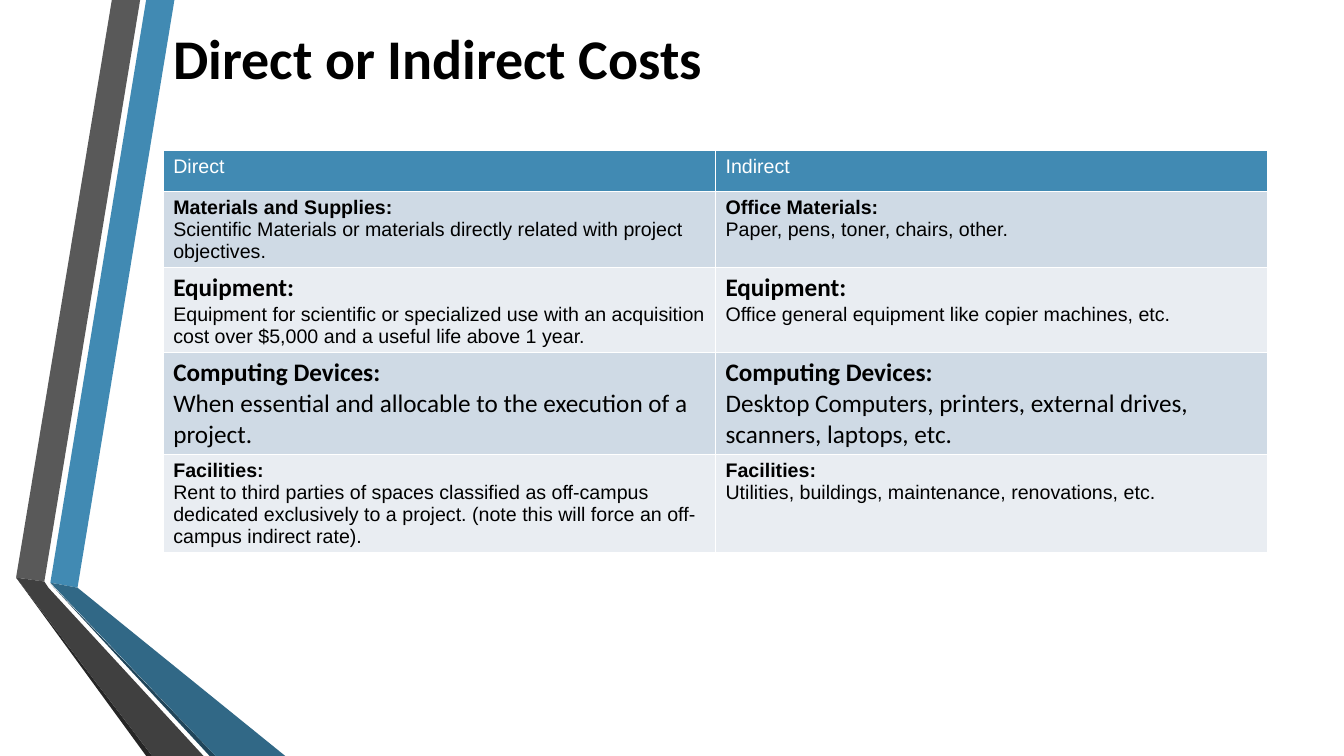
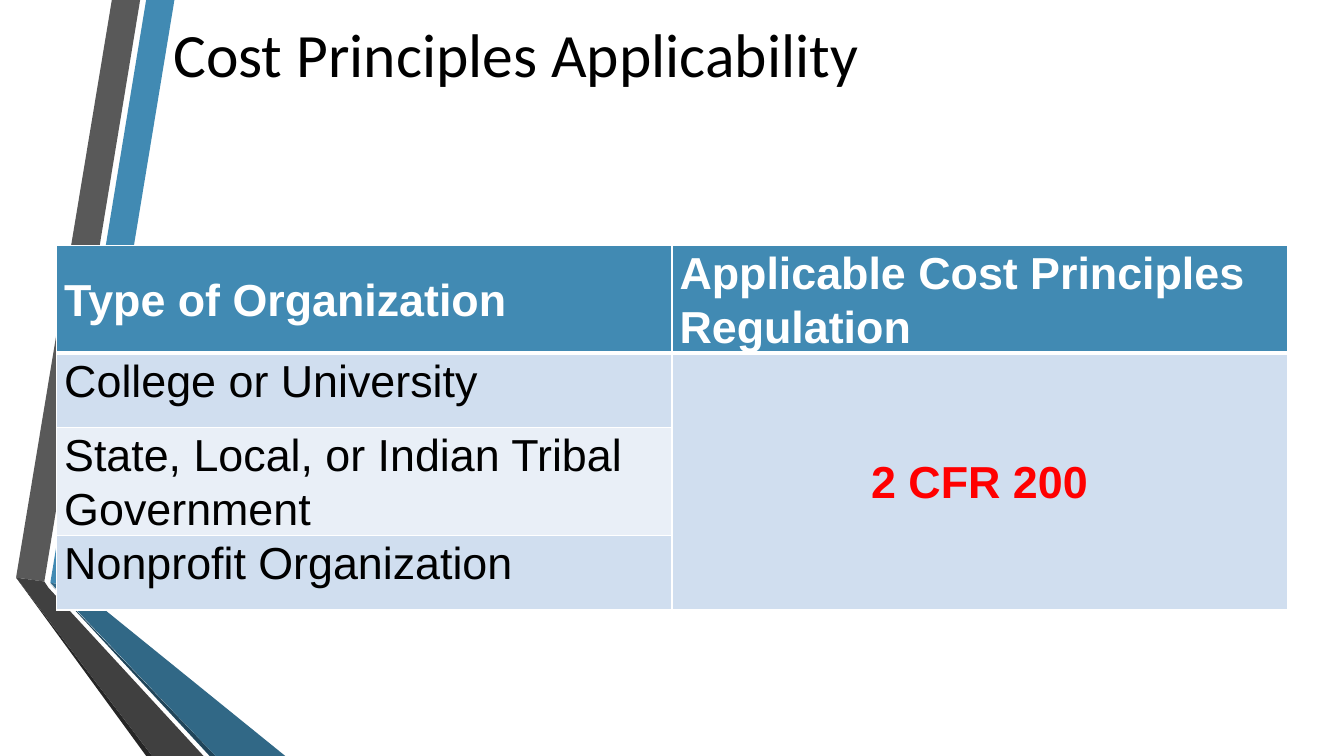
from dataclasses import dataclass
from typing import Any

from lxml.etree import SubElement
from pptx import Presentation
from pptx.dml.color import RGBColor
from pptx.enum.text import MSO_ANCHOR as Anchor, MSO_AUTO_SIZE as AutoSize, PP_ALIGN as Align
from pptx.oxml.ns import qn
from pptx.util import Pt

BLUE = RGBColor(0x41, 0x8A, 0xB3)
BLUE_FOLD = RGBColor(0x31, 0x68, 0x86)
BLUE_EDGE = RGBColor(0x20, 0x45, 0x5A)
GREY = RGBColor(0x59, 0x59, 0x59)
GREY_FOLD = RGBColor(0x40, 0x40, 0x40)
GREY_EDGE = RGBColor(0x26, 0x26, 0x26)
COST_TINTS = (RGBColor(0xCF, 0xDA, 0xE5), RGBColor(0xE9, 0xED, 0xF2))
RULE_TINTS = (RGBColor(0xD0, 0xDE, 0xEF), RGBColor(0xE9, 0xEF, 0xF7))
WHITE = RGBColor(0xFF, 0xFF, 0xFF)
BLACK = RGBColor(0, 0, 0)
RED = RGBColor(0xFF, 0, 0)

WIDTH, HEIGHT = 960, 540
SMALL = {"font": "Arial", "size": 14}
LARGE = {"font": "Calibri", "size": 18}
RULE_TEXT = {"font": "Arial", "size": 32, "spacing": 1.07}
TITLE_LEFT, TITLE_TOP, TITLE_WIDTH, TITLE_HEIGHT = 116.6, -28, 789, 138


@dataclass(frozen=True)
class Band:
    color: RGBColor
    points: tuple[tuple[float, float], ...]


@dataclass(frozen=True)
class Grid:
    left: float
    top: float
    width: float
    row_height: float
    rows: int
    tints: tuple[RGBColor, RGBColor]
    header_rule: float
    margin_x: float
    margin_y: float


@dataclass(frozen=True)
class Cost:
    heading: str
    detail: str


@dataclass(frozen=True)
class CostPair:
    direct: Cost
    indirect: Cost
    heading_format: dict[str, Any]
    detail_format: dict[str, Any]


BANDS = (
    Band(BLUE, ((36, 416.2), (55.4, 419.8), (124.6, 0), (104.4, 0))),
    Band(GREY, ((100.1, 0), (79.9, 0), (11.5, 412.6), (31.7, 415.4))),
    Band(GREY_EDGE, ((11.5, 412.6), (104.4, HEIGHT), (108.7, HEIGHT))),
    Band(BLUE_EDGE, ((36, 416.9), (149.8, HEIGHT), (154.1, HEIGHT))),
    Band(BLUE_FOLD, ((36, 416.2), (154.1, HEIGHT), (203.8, HEIGHT), (55.4, 419.8))),
    Band(GREY_FOLD, ((145.4, HEIGHT), (34.6, 419.8), (31.7, 415.4), (11.5, 412.6),
                     (108.7, HEIGHT))),
)

COSTS = (
    CostPair(
        Cost("Materials and Supplies:",
             "Scientific Materials or materials directly related with project objectives."),
        Cost("Office Materials:", "Paper, pens, toner, chairs, other."),
        SMALL, SMALL),
    CostPair(
        Cost("Equipment:",
             "Equipment for scientific or specialized use with an acquisition cost over "
             "$5,000 and a useful life above 1 year."),
        Cost("Equipment:", "Office general equipment like copier machines, etc."),
        LARGE, SMALL),
    CostPair(
        Cost("Computing Devices:",
             "When essential and allocable to the execution of a project."),
        Cost("Computing Devices:",
             "Desktop Computers, printers, external drives, scanners, laptops, etc."),
        LARGE, LARGE),
    CostPair(
        Cost("Facilities:",
             "Rent to third parties of spaces classified as off-campus dedicated exclusively "
             "to a project. (note this will force an off-campus indirect rate)."),
        Cost("Facilities:", "Utilities, buildings, maintenance, renovations, etc."),
        SMALL, SMALL),
)

ORGANIZATIONS = (
    "College or University",
    "State, Local, or Indian Tribal Government",
    "Nonprofit Organization",
)

COST_GRID = Grid(116.6, 107.5, 789, 29.2, len(COSTS) + 1, COST_TINTS, 1, 7.2, 3.6)
RULE_GRID = Grid(40.5, 175.5, 879, 53.3, len(ORGANIZATIONS) + 1, RULE_TINTS, 3, 5.4, 0)


def write(frame, text: str, *, font: str, size: float, color: RGBColor = BLACK,
          bold: bool = False, align=Align.LEFT, spacing: float = 1.0) -> None:
    """Fill the frame's empty first paragraph, or add one after the text it has."""
    paragraph = frame.add_paragraph() if frame.text else frame.paragraphs[0]
    paragraph.alignment = align
    paragraph.line_spacing = spacing
    run = paragraph.add_run()
    run.text = text
    run.font.name = font
    run.font.size = Pt(size)
    run.font.bold = bold
    run.font.color.rgb = color


def add_bands(slide, layout) -> None:
    """Draw the folded bands and move them behind everything, into the layout."""
    for band in BANDS:
        corners = [(Pt(x), Pt(y)) for x, y in band.points]
        builder = slide.shapes.build_freeform(*corners[0], scale=1.0)
        builder.add_line_segments(corners[1:], close=True)
        shape = builder.convert_to_shape()
        shape.shadow.inherit = False
        shape.fill.solid()
        shape.fill.fore_color.rgb = band.color
        shape.line.fill.background()
        layout.shapes._spTree.append(shape._element)


def set_title(slide, text: str, **text_format) -> None:
    title = slide.shapes.title
    title.left, title.top = Pt(TITLE_LEFT), Pt(TITLE_TOP)
    title.width, title.height = Pt(TITLE_WIDTH), Pt(TITLE_HEIGHT)
    frame = title.text_frame
    frame.word_wrap = True
    frame.auto_size = AutoSize.NONE
    frame.vertical_anchor = Anchor.MIDDLE
    write(frame, text, font="Calibri", **text_format)


def set_borders(cell, top: float, bottom: float) -> None:
    properties = cell._tc.get_or_add_tcPr()
    for side, width in (("L", 1), ("R", 1), ("T", top), ("B", bottom)):
        line = SubElement(properties, qn(f"a:ln{side}"), w=str(Pt(width)))
        fill = SubElement(line, qn("a:solidFill"))
        SubElement(fill, qn("a:srgbClr"), val=str(WHITE))


def add_grid(slide, grid: Grid):
    """Add an empty two-column table with a blue header and alternating rows."""
    table = slide.shapes.add_table(
        grid.rows, 2, Pt(grid.left), Pt(grid.top),
        Pt(grid.width), Pt(grid.row_height * grid.rows)).table
    table.first_row = table.horz_banding = False
    for column in table.columns:
        column.width = Pt(grid.width / 2)
    for index, row in enumerate(table.rows):
        row.height = Pt(grid.row_height)
        for cell in row.cells:
            set_borders(cell, top=grid.header_rule if index == 1 else 1,
                        bottom=grid.header_rule if index == 0 else 1)
            cell.fill.solid()
            cell.fill.fore_color.rgb = grid.tints[(index - 1) % 2] if index else BLUE
            cell.margin_left = cell.margin_right = Pt(grid.margin_x)
            cell.margin_top = cell.margin_bottom = Pt(grid.margin_y)
    return table


def build_costs(slide) -> None:
    set_title(slide, "Direct or Indirect Costs", size=40, bold=True)
    table = add_grid(slide, COST_GRID)
    for column, heading in enumerate(("Direct", "Indirect")):
        write(table.cell(0, column).text_frame, heading, color=WHITE, **SMALL)
    for row, pair in enumerate(COSTS, start=1):
        for column, cost in enumerate((pair.direct, pair.indirect)):
            frame = table.cell(row, column).text_frame
            write(frame, cost.heading, bold=True, **pair.heading_format)
            write(frame, cost.detail, **pair.detail_format)


def build_applicability(slide) -> None:
    set_title(slide, "Cost Principles Applicability", size=44, spacing=0.9)
    table = add_grid(slide, RULE_GRID)
    headings = ("Type of Organization", "Applicable Cost Principles Regulation")
    for column, heading in enumerate(headings):
        cell = table.cell(0, column)
        cell.vertical_anchor = Anchor.MIDDLE
        write(cell.text_frame, heading, color=WHITE, bold=True, **RULE_TEXT)
    for row, organization in enumerate(ORGANIZATIONS, start=1):
        write(table.cell(row, 0).text_frame, organization, **RULE_TEXT)
    regulation = table.cell(1, 1)
    regulation.merge(table.cell(len(ORGANIZATIONS), 1))
    regulation.vertical_anchor = Anchor.MIDDLE
    write(regulation.text_frame, "2 CFR 200", color=RED, bold=True,
          align=Align.CENTER, **RULE_TEXT)


def main() -> None:
    deck = Presentation()
    deck.slide_width, deck.slide_height = Pt(WIDTH), Pt(HEIGHT)
    title_only = deck.slide_layouts.get_by_name("Title Only")
    costs, applicability = (deck.slides.add_slide(title_only) for _ in range(2))
    add_bands(costs, title_only)
    build_costs(costs)
    build_applicability(applicability)
    deck.save("out.pptx")


if __name__ == "__main__":
    main()
